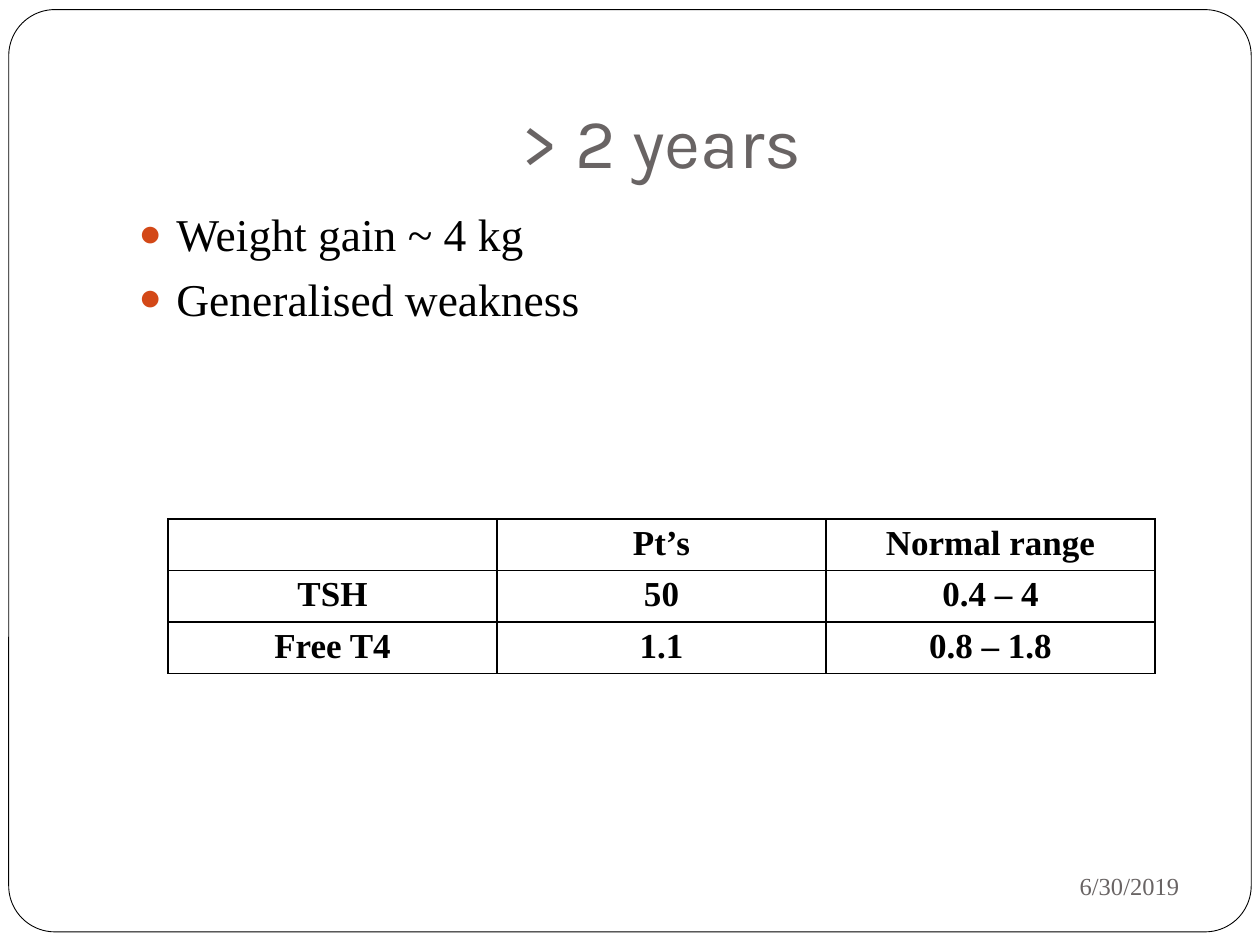
from lxml import etree
from pptx import Presentation
from pptx import util as u
from pptx.dml.color import RGBColor
from pptx.enum import shapes, text
from pptx.oxml.ns import qn

COLORS = {"paper": "FFFFFF", "ink": "000000", "muted": "696464", "bullet": "D34817"}
HEADING, BODY = "Karla", "Times New Roman"
ALIGN, ANCHOR = text.PP_ALIGN, text.MSO_ANCHOR


def rgb(name):
    return RGBColor.from_string(COLORS[name])


def add(parent, tag, **attrs):
    return etree.SubElement(parent, qn(tag), **attrs)


class Deck:
    def __init__(self, width, height):
        self.prs = Presentation()
        self.prs.slide_width, self.prs.slide_height = u.Pt(width), u.Pt(height)
        self.s = self.prs.slides.add_slide(self.prs.slide_layouts[1])

    def place(self, sp, x, y, w, h):
        sp.left, sp.top, sp.width, sp.height = map(u.Pt, (x, y, w, h))

    def setup(self, tf, anchor):
        tf.word_wrap = True
        tf.auto_size = text.MSO_AUTO_SIZE.NONE
        tf.vertical_anchor = anchor

    def run(self, p, words, size, color="ink", font=BODY, bold=False, align=ALIGN.LEFT):
        p.alignment = align
        r = p.add_run()
        r.text = words
        r.font.size, r.font.name, r.font.bold = u.Pt(size), font, bold
        r.font.color.rgb = rgb(color)

    def frame(self, x, y, w, h, corner):
        sp = self.s.shapes.add_shape(
            shapes.MSO_SHAPE.ROUNDED_RECTANGLE, *map(u.Pt, (x, y, w, h)))
        sp.adjustments[0] = corner
        sp.shadow.inherit = False
        sp.fill.solid()
        sp.fill.fore_color.rgb = rgb("paper")
        sp.line.color.rgb = rgb("ink")
        sp.line.width = u.Pt(0.5)
        self.s.shapes.element.insert(2, sp.element)

    def title(self, words, *box):
        sp = self.s.shapes.title
        self.place(sp, *box)
        tf = sp.text_frame
        self.setup(tf, ANCHOR.BOTTOM)
        tf.margin_bottom = u.Pt(7.2)
        self.run(tf.paragraphs[0], words, 40, "muted", HEADING, align=ALIGN.CENTER)

    def bullets(self, items, *box):
        sp = self.s.placeholders[1]
        self.place(sp, *box)
        tf = sp.text_frame
        self.setup(tf, ANCHOR.TOP)
        for i, item in enumerate(items):
            p = tf.add_paragraph() if i else tf.paragraphs[0]
            self.run(p, item, 26)
            p.space_before = u.Pt(5.8)
            pPr = p._p.get_or_add_pPr()
            pPr.set("marL", str(u.Pt(21.6)))
            pPr.set("indent", str(u.Pt(-21.6)))
            add(add(pPr, "a:buClr"), "a:srgbClr", val=COLORS["bullet"])
            add(pPr, "a:buSzPct", val="85000")
            add(pPr, "a:buFont", typeface=BODY)
            add(pPr, "a:buChar", char="●")

    def label(self, words, *box):
        sp = self.s.shapes.add_textbox(*map(u.Pt, box))
        self.setup(sp.text_frame, ANCHOR.MIDDLE)
        self.run(sp.text_frame.paragraphs[0], words, 14, "muted", align=ALIGN.RIGHT)

    def borders(self, cell):
        tcPr = cell._tc.get_or_add_tcPr()
        for i, side in enumerate(("a:lnL", "a:lnR", "a:lnT", "a:lnB")):
            ln = etree.Element(qn(side), w=str(u.Pt(1)))
            add(add(ln, "a:solidFill"), "a:srgbClr", val=COLORS["ink"])
            tcPr.insert(i, ln)

    def table(self, rows, x, y, w, row_h):
        tbl = self.s.shapes.add_table(
            len(rows), len(rows[0]), *map(u.Pt, (x, y, w, row_h * len(rows)))).table
        tbl.first_row = tbl.horz_banding = False
        for i, row in enumerate(rows):
            for j, words in enumerate(row):
                cell = tbl.cell(i, j)
                cell.fill.background()
                cell.margin_top = cell.margin_bottom = u.Pt(3)
                self.borders(cell)
                if words:
                    self.run(cell.text_frame.paragraphs[0], words, 20,
                             bold=True, align=ALIGN.CENTER)


def main():
    deck = Deck(720, 540)
    deck.frame(5, 5.5, 710, 527, 0.05)
    deck.title("> 2 years", 72, 21.6, 612, 90)
    deck.bullets(["Weight gain ~ 4 kg", "Generalised weakness"], 72, 114, 612, 360)
    deck.label("6/30/2019", 486, 487.5, 195, 37.5)
    deck.table([["", "Pt’s", "Normal range"],
                ["TSH", "50", "0.4 – 4"],
                ["Free T4", "1.1", "0.8 – 1.8"]], 96, 296.5, 564, 29.5)
    deck.prs.save("out.pptx")


if __name__ == "__main__":
    main()
